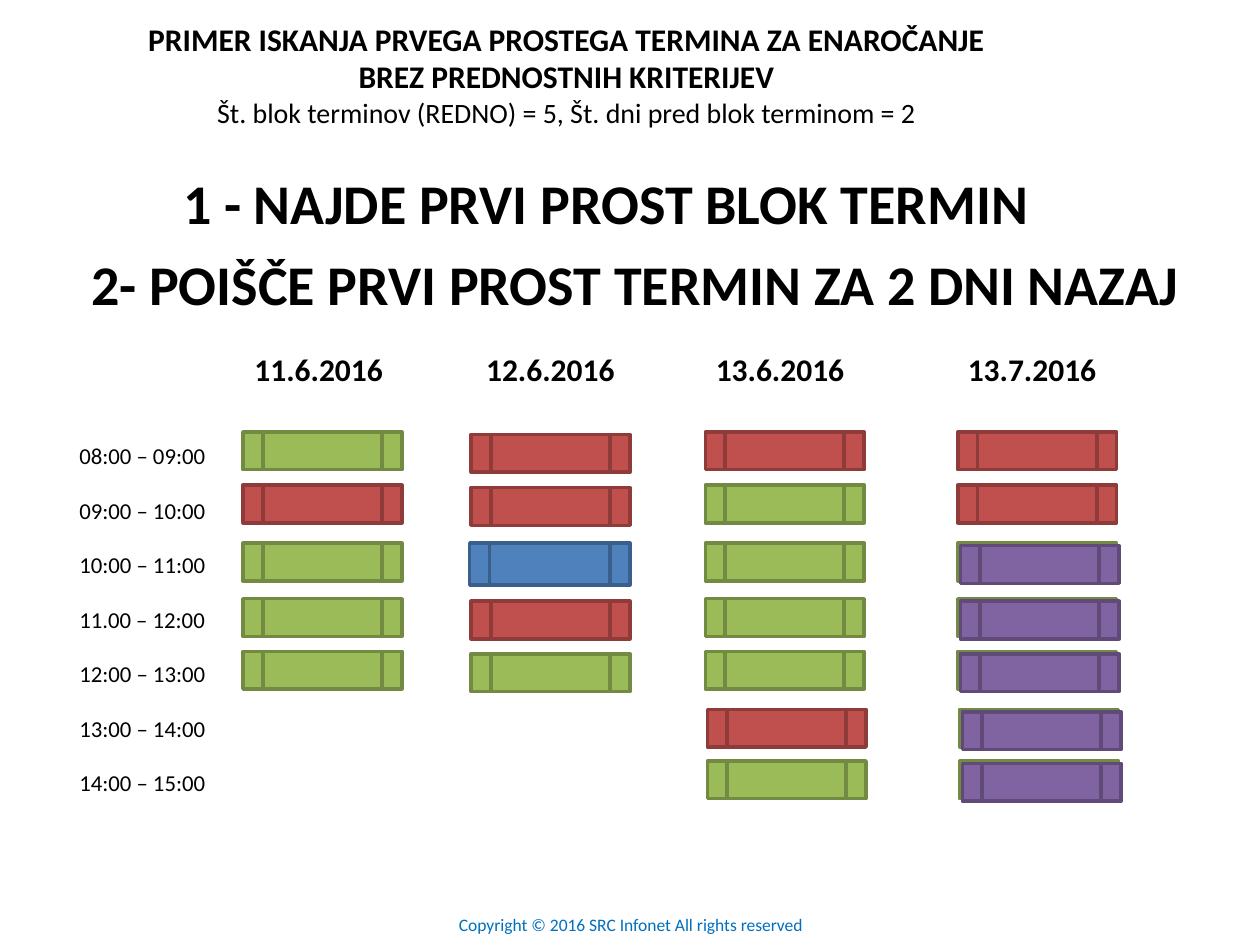
from lxml.etree import SubElement as Sub
from pptx import Presentation as Deck
from pptx.dml.color import RGBColor as Rgb
from pptx.enum.shapes import MSO_SHAPE as Kind
from pptx.enum.text import MSO_ANCHOR as Anchor, PP_ALIGN as Align
from pptx.oxml.ns import qn
from pptx.util import Cm, Pt

THEME = {
    "face": "Calibri",
    "ink": "000000",
    "note": "0070C0",
    "size": {"head": 18, "sub": 16, "step": 32, "date": 18, "time": 13, "foot": 10},
    "edge": 2,
    "slot": {
        "G": ("9BBB59", "738A42"),
        "R": ("C0504D", "8E3B39"),
        "P": ("8064A2", "5F4A78"),
        "B": ("4F81BD", "3A5F8C"),
    },
}

HEAD = [
    ("PRIMER ISKANJA PRVEGA PROSTEGA TERMINA ZA ENAROČANJE", "head", True),
    ("BREZ PREDNOSTNIH KRITERIJEV", "head", True),
    ("Št. blok terminov (REDNO) = 5, Št. dni pred blok terminom = 2", "sub", False),
]
STEPS = [
    ("1 - NAJDE PRVI PROST BLOK TERMIN", (0.74, 3.28, 22.96, 1.63)),
    ("2- POIŠČE PRVI PROST TERMIN ZA 2 DNI NAZAJ", (1.09, 4.9, 23.44, 1.63)),
]
DATES = ["11.6.2016", "12.6.2016", "13.6.2016", "13.7.2016"]
TABS = [4.67, 9.3, 14.38]
TIMES = [
    "08:00 – 09:00", "09:00 – 10:00", "10:00 – 11:00", "11.00 – 12:00",
    "12:00 – 13:00", "13:00 – 14:00", "14:00 – 15:00",
]
FOOT = "Copyright © 2016 SRC Infonet All rights reserved"

DAYS = [
    (4.9, 0, "GRGGG"),
    (9.5, 0.05, "RR-RG"),
    (14.22, 0, "RGGGGRG"),
    (19.31, 0, "RRGGGGG"),
    (19.36, 0.05, "--PPPPP"),
]
ROWS = [8.71, 9.78, 10.95, 12.07, 13.13, 14.3, 15.34]
SLOT = (3.2, 0.76)
SHIFT = 0.04
FOUND = (9.47, 10.95, 3.23, 0.84)

deck = Deck()
deck.slide_width, deck.slide_height = Cm(25.4), Cm(19.05)
page = deck.slides.add_slide(deck.slide_layouts[6])


def put(obj, form):
    for key, val in form.items():
        setattr(obj, key, val)


def text(lines, area, frame=None, para=None, gap=0, tabs=(), ink="ink"):
    body = page.shapes.add_textbox(*map(Cm, area)).text_frame
    put(body, {"word_wrap": True, **(frame or {})})
    for num, (words, size, bold) in enumerate(lines):
        line = body.paragraphs[0] if num == 0 else body.add_paragraph()
        put(line, para or {})
        if num and gap:
            line.space_before = Pt(gap)
        if tabs:
            stops = Sub(line._p.get_or_add_pPr(), qn("a:tabLst"))
            for stop in tabs:
                Sub(stops, qn("a:tab"), pos=str(Cm(stop)), algn="l")
        run = line.add_run()
        run.text = words
        put(run.font, {"name": THEME["face"], "bold": bold,
                       "size": Pt(THEME["size"][size])})
        run.font.color.rgb = Rgb.from_string(THEME[ink])


def slot(code, area):
    fill, edge = map(Rgb.from_string, THEME["slot"][code])
    box = page.shapes.add_shape(Kind.FLOWCHART_PREDEFINED_PROCESS, *map(Cm, area))
    box.shadow.inherit = False
    box.fill.solid()
    box.fill.fore_color.rgb = fill
    box.line.color.rgb = edge
    box.line.width = Pt(THEME["edge"])


MID = {"alignment": Align.CENTER}
text(HEAD, (1.07, 0.25, 20.7, 2.49), {"vertical_anchor": Anchor.MIDDLE}, MID)
text([("\t".join(DATES), "date", True)], (3.3, 6.93, 22.1, 1.02),
     {"vertical_anchor": Anchor.MIDDLE, "margin_left": Cm(1.83)}, tabs=TABS)
text([(time, "time", False) for time in TIMES], (1.35, 8.79, 3.56, 7.49), gap=15.5)
for words, area in STEPS:
    text([(words, "step", True)], area, para=MID)
text([(FOOT, "foot", False)], (8.69, 17.83, 8.05, 1.02),
     {"vertical_anchor": Anchor.BOTTOM, "margin_left": 0, "margin_right": 0,
      "margin_bottom": 0}, MID, ink="note")

for left, drop, codes in DAYS:
    for row, code in enumerate(codes):
        if code != "-":
            side = left + (SHIFT if row > 4 else 0)
            slot(code, (side, ROWS[row] + drop, *SLOT))
slot("B", FOUND)

deck.save("out.pptx")
